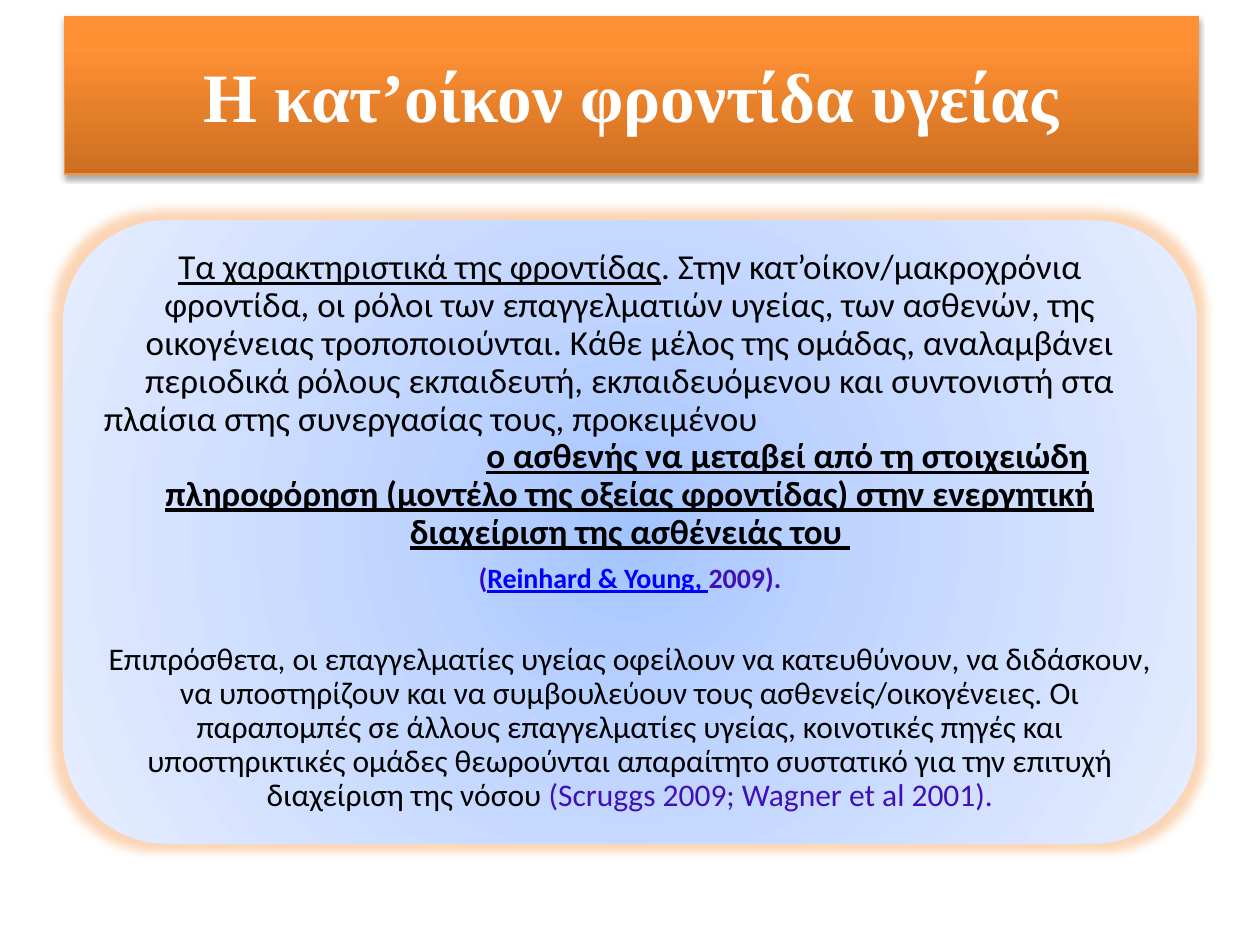
from lxml import etree
from pptx import Presentation
from pptx.dml.color import RGBColor
from pptx.enum.shapes import MSO_SHAPE
from pptx.enum.text import MSO_ANCHOR, MSO_AUTO_SIZE, PP_ALIGN
from pptx.oxml import parse_xml
from pptx.util import Pt

COLORS = {
    "white": "FFFFFF", "black": "000000", "border": "F69240", "glow": "F79646",
    "violet": "3604C4", "cite": "4010B8", "link": "0000FF",
}
TITLE_STOPS = [(0, "CC6E20"), (80, "FF9034"), (100, "FF9136")]
PANEL_STOPS = [(0, "A4C4FF"), (35, "BFD4FF"), (100, "E6EEFF")]
LINEAR = '<a:lin ang="16200000" scaled="0"/>'
RADIAL = '<a:path path="circle"><a:fillToRect l="50000" t="50000" r="50000" b="50000"/></a:path>'
SHADOW = ('<a:outerShdw blurRad="39370" dist="22860" dir="5400000" rotWithShape="0">'
          '<a:srgbClr val="000000"><a:alpha val="35000"/></a:srgbClr></a:outerShdw>')
GLOW = (f'<a:glow rad="139700"><a:srgbClr val="{COLORS["glow"]}">'
        '<a:alpha val="40000"/></a:srgbClr></a:glow>')
NS = "http://schemas.openxmlformats.org/drawingml/2006/main"


def add_xml(parent, tag, content):
    parent.append(parse_xml(f'<a:{tag} xmlns:a="{NS}">{content}</a:{tag}>'))


class Slide:
    """Holds the style and the page being built; lengths are in points."""
    heading_font = "Times New Roman"
    body_font = "Calibri"

    def __init__(self, deck):
        self.page = deck.slides.add_slide(deck.slide_layouts[5])

    def place(self, shape, left, top, width, height):
        shape.left, shape.top = Pt(left), Pt(top)
        shape.width, shape.height = Pt(width), Pt(height)

    def paint(self, shape, stops, direction, effect, border=None):
        marks = "".join(f'<a:gs pos="{pos * 1000}"><a:srgbClr val="{color}"/></a:gs>'
                        for pos, color in stops)
        properties = shape.element.spPr
        add_xml(properties, "gradFill", f"<a:gsLst>{marks}</a:gsLst>{direction}")
        if border:
            shape.line.color.rgb = RGBColor.from_string(COLORS[border])
            shape.line.width = Pt(0.75)
        else:
            shape.line.fill.background()
        add_xml(properties, "effectLst", effect)

    def style(self, span, name, size, color="black", bold=False, underline=False):
        font = span.font
        font.name, font.size = name, Pt(size)
        font.bold, font.underline = bold, underline
        font.color.rgb = RGBColor.from_string(COLORS[color])

    def title(self, text, *area):
        shape = self.page.shapes.title
        self.place(shape, *area)
        self.paint(shape, TITLE_STOPS, LINEAR, SHADOW, "border")
        frame = shape.text_frame
        frame.text = text
        frame.word_wrap = True
        frame.auto_size = MSO_AUTO_SIZE.NONE
        frame.vertical_anchor = MSO_ANCHOR.MIDDLE
        para = frame.paragraphs[0]
        para.alignment = PP_ALIGN.CENTER
        self.style(para.runs[0], self.heading_font, 39.6, "white", bold=True)

    def panel(self, *area):
        shape = self.page.shapes.add_shape(MSO_SHAPE.ROUNDED_RECTANGLE, *map(Pt, area))
        self.paint(shape, PANEL_STOPS, RADIAL, GLOW)

    def body(self, paragraphs, *area):
        frame = self.page.shapes.add_textbox(*map(Pt, area)).text_frame
        frame.word_wrap = True
        frame.vertical_anchor = MSO_ANCHOR.MIDDLE
        frame.margin_left = frame.margin_right = Pt(6)
        frame.margin_top = frame.margin_bottom = Pt(6)
        for number, (align, after, indent, spans) in enumerate(paragraphs):
            para = frame.add_paragraph() if number else frame.paragraphs[0]
            para.alignment = align
            para.line_spacing = 0.9
            para.space_after = Pt(after)
            if indent:
                para._p.get_or_add_pPr().set("indent", str(Pt(indent)))
            for text, look in spans:
                span = para.add_run()
                span.text = text
                self.style(span, self.body_font, **look)


# Paragraphs: alignment, space after, first-line indent, spans
PLAIN = {"size": 20}
PARAGRAPHS = [
    (PP_ALIGN.CENTER, 0, 0, [
        ("Τα χαρακτηριστικά της φροντίδας", {"size": 20, "underline": True}),
        (". Στην κατ’οίκον/μακροχρόνια φροντίδα, οι ρόλοι των επαγγελματιών υγείας, "
         "των ασθενών, της οικογένειας τροποποιούνται. Κάθε μέλος της ομάδας, "
         "αναλαμβάνει περιοδικά ρόλους εκπαιδευτή, εκπαιδευόμενου και συντονιστή στα", PLAIN),
    ]),
    (PP_ALIGN.LEFT, 0, 0, [("πλαίσια στης συνεργασίας τους, προκειμένου", PLAIN)]),
    (PP_ALIGN.CENTER, 7, 180, [
        ("ο ασθενής να μεταβεί από τη στοιχειώδη πληροφόρηση (μοντέλο της οξείας "
         "φροντίδας) στην ενεργητική διαχείριση της ασθένειάς του ",
         {"size": 20, "bold": True, "underline": True}),
    ]),
    (PP_ALIGN.CENTER, 28, 0, [
        ("(", {"size": 16, "color": "violet", "bold": True}),
        ("Reinhard & Young, ", {"size": 16, "color": "link", "bold": True, "underline": True}),
        ("2009).", {"size": 16, "color": "cite", "bold": True}),
    ]),
    (PP_ALIGN.CENTER, 0, 0, [
        ("Επιπρόσθετα, οι επαγγελματίες υγείας οφείλουν να κατευθύνουν, να διδάσκουν, "
         "να υποστηρίζουν και να συμβουλεύουν τους ασθενείς/οικογένειες. Οι παραπομπές "
         "σε άλλους επαγγελματίες υγείας, κοινοτικές πηγές και υποστηρικτικές ομάδες "
         "θεωρούνται απαραίτητο συστατικό για την επιτυχή διαχείριση της νόσου ", {"size": 18}),
        ("(Scruggs 2009; Wagner et al 2001).", {"size": 18, "color": "cite"}),
    ]),
]


def main():
    deck = Presentation()
    deck.slide_width, deck.slide_height = Pt(720), Pt(540)
    slide = Slide(deck)

    # Heading banner
    slide.title("Η κατ’οίκον φροντίδα υγείας", 36.7, 9.4, 648, 90)

    # Glowing panel with its text
    slide.panel(36, 126, 648, 356)
    slide.body(PARAGRAPHS, 53.3, 143.3, 613.4, 321)

    deck.save("out.pptx")


if __name__ == "__main__":
    main()
